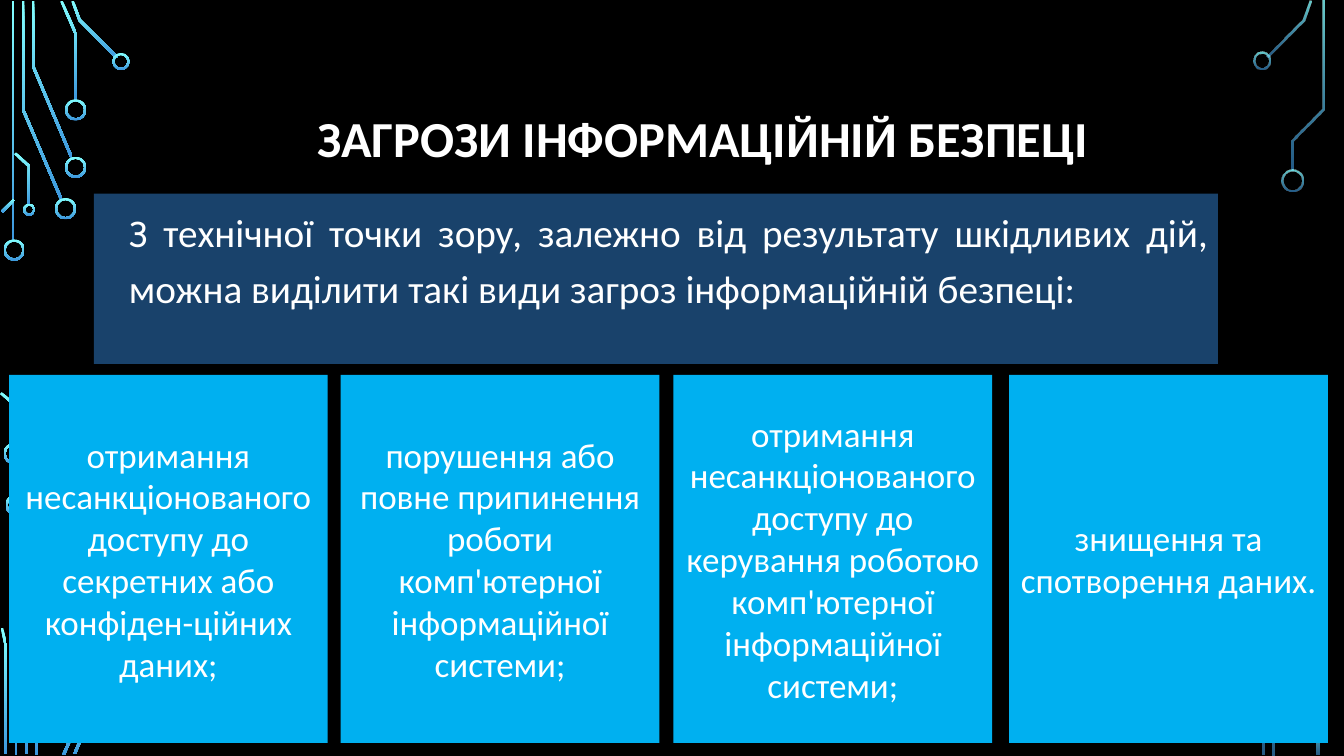
import math

import lxml.etree
import pptx
import pptx.dml.color
import pptx.enum.shapes
import pptx.enum.text
import pptx.oxml.ns
import pptx.util

COLUMNS, ROWS = 1333, 750  # grid of square cells
CELL = pptx.util.Inches(0.01)
ALIGN = pptx.enum.text.PP_ALIGN
ANCHOR = pptx.enum.text.MSO_ANCHOR
SHAPE = pptx.enum.shapes.MSO_SHAPE

TITLE = "ЗАГРОЗИ ІНФОРМАЦІЙНІЙ БЕЗПЕЦІ"
INTRO = ("З технічної точки зору, залежно від результату шкідливих дій, "
         "можна виділити такі види загроз інформаційній безпеці:")
THREATS = [
    (9, "отримання несанкціонованого доступу до секретних або конфіден-ційних даних;"),
    (338, "порушення або повне припинення роботи комп'ютерної інформаційної системи;"),
    (668, "отримання несанкціонованого доступу до керування роботою "
          "комп'ютерної інформаційної системи;"),
    (1001, "знищення та спотворення даних."),
]

# Circuit traces as centre lines, and nodes as (column, row, diameter)
LEFT_TRACES = [
    [(13, 1), (13, 240)],
    [(23, 1), (23, 109), (61, 198)],
    [(33, 1), (33, 66), (71, 156)],
    [(61, 1), (75, 33), (75, 100)],
    [(72, 1), (79, 20), (116, 57)],
    [(2, 210), (14, 198)],
    [(1, 390), (14, 401), (14, 441)],
    [(15, 152), (29, 165), (29, 203)],
    [(16, 510), (16, 749)],
    [(26, 748), (26, 641), (63, 552)],
    [(6, 748), (6, 641), (2, 623)],
    [(36, 749), (36, 682), (73, 593)],
    [(63, 749), (77, 717), (77, 650)],
    [(74, 748), (82, 729), (118, 693)],
]
LEFT_NODES = [(14, 248, 21), (14, 450, 21), (65, 207, 21), (75, 166, 21),
              (75, 109, 21), (120, 61, 17), (29, 208, 12), (16, 501, 21)]
RIGHT_TRACES = [
    [(1257, 56), (1293, 20), (1300, 1)],
    [(1263, 749), (1263, 693), (1293, 623)],
    [(1282, 169), (1282, 139), (1312, 108), (1312, 1)],
    [(1253, 749), (1253, 613), (1283, 583), (1283, 552)],
    [(1307, 721), (1307, 749)],
]
RIGHT_NODES = [(1252, 60, 17), (1282, 179, 21), (1306, 712, 21)]


def color(value):
    return pptx.dml.color.RGBColor.from_string(value)


def write(box, text, size=25, bold=False, align=ALIGN.CENTER, anchor=ANCHOR.MIDDLE,
          spacing=None, indent=0):
    frame = box.text_frame
    frame.word_wrap = True
    frame.vertical_anchor = anchor
    para = frame.paragraphs[0]
    para.alignment = align
    para.line_spacing = spacing
    if indent:
        para._p.get_or_add_pPr().set("marL", str(indent * CELL))
    span = para.add_run()
    span.text = text
    span.font.name = "Calibri"
    span.font.size = pptx.util.Pt(size)
    span.font.bold = bold
    span.font.color.rgb = color("FFFFFF")


def outline(line, width=2.5):
    """Return the polygon around a centre line, with mitred corners."""
    normals = []
    for (x1, y1), (x2, y2) in zip(line, line[1:]):
        length = math.hypot(x2 - x1, y2 - y1)
        normals.append(((y1 - y2) / length, (x2 - x1) / length))
    one, other = [], []
    for (x, y), (ax, ay), (bx, by) in zip(line, normals[:1] + normals, normals + normals[-1:]):
        reach = width / 2 / (1 + ax * bx + ay * by)
        dx, dy = (ax + bx) * reach, (ay + by) * reach
        one.append((x + dx, y + dy))
        other.append((x - dx, y - dy))
    return one + other[::-1]


class Slide:
    glow = ("82FFFF", "3D97DE")

    def __init__(self, deck, background):
        self.page = deck.slides.add_slide(deck.slide_layouts[6])
        self.page.background.fill.solid()
        self.page.background.fill.fore_color.rgb = color(background)

    def paint_glow(self, shape, alphas):
        shape.shadow.inherit = False
        shape.line.fill.background()
        shape.fill.gradient()
        shape.fill.gradient_angle = 270
        for stop, tone in zip(shape.fill.gradient_stops, self.glow):
            stop.color.rgb = color(tone)
        tones = shape._element.spPr.iter(pptx.oxml.ns.qn("a:srgbClr"))
        for tone, alpha in zip(list(tones), alphas):
            if alpha < 100:
                lxml.etree.SubElement(tone, pptx.oxml.ns.qn("a:alpha"), val=str(alpha * 1000))

    def trace(self, line, alphas):
        points = [(x * CELL, y * CELL) for x, y in outline(line)]
        builder = self.page.shapes.build_freeform(*points[0], scale=1.0)
        builder.add_line_segments(points[1:], close=True)
        self.paint_glow(builder.convert_to_shape(), alphas)

    def node(self, column, row, diameter, alphas):
        corner = [(center - diameter / 2) * CELL for center in (column, row)]
        left, top = map(round, corner)
        size = diameter * CELL
        ring = self.page.shapes.add_shape(SHAPE.DONUT, left, top, size, size)
        ring.adjustments[0] = 2 / diameter
        self.paint_glow(ring, alphas)

    def circuit(self, traces, nodes, alphas):
        for line in traces:
            self.trace(line, alphas)
        for place in nodes:
            self.node(*place, alphas)

    def label(self, area, text, **form):
        box = self.page.shapes.add_textbox(*(length * CELL for length in area))
        write(box, text, **form)

    def panel(self, area, fill, text, **form):
        box = self.page.shapes.add_shape(SHAPE.RECTANGLE, *(length * CELL for length in area))
        box.shadow.inherit = False
        box.fill.solid()
        box.fill.fore_color.rgb = color(fill)
        box.line.fill.background()
        write(box, text, **form)


def main():
    deck = pptx.Presentation()
    deck.slide_width, deck.slide_height = COLUMNS * CELL, ROWS * CELL
    slide = Slide(deck, "000000")

    # Circuit decoration on both sides
    slide.circuit(LEFT_TRACES, LEFT_NODES, (100, 100))
    slide.circuit(RIGHT_TRACES, RIGHT_NODES, (80, 60))

    # Title and introduction
    slide.label((156, 59, 1083, 162), TITLE, size=36, bold=True, spacing=0.9)
    slide.panel((93, 192, 1115, 169), "19426B", INTRO, size=28, align=ALIGN.JUSTIFY,
                anchor=ANCHOR.TOP, spacing=1.2, indent=25)

    # Threat cards
    for left, threat in THREATS:
        slide.panel((left, 372, 316, 365), "00B0F0", threat)

    deck.save("out.pptx")


if __name__ == "__main__":
    main()
